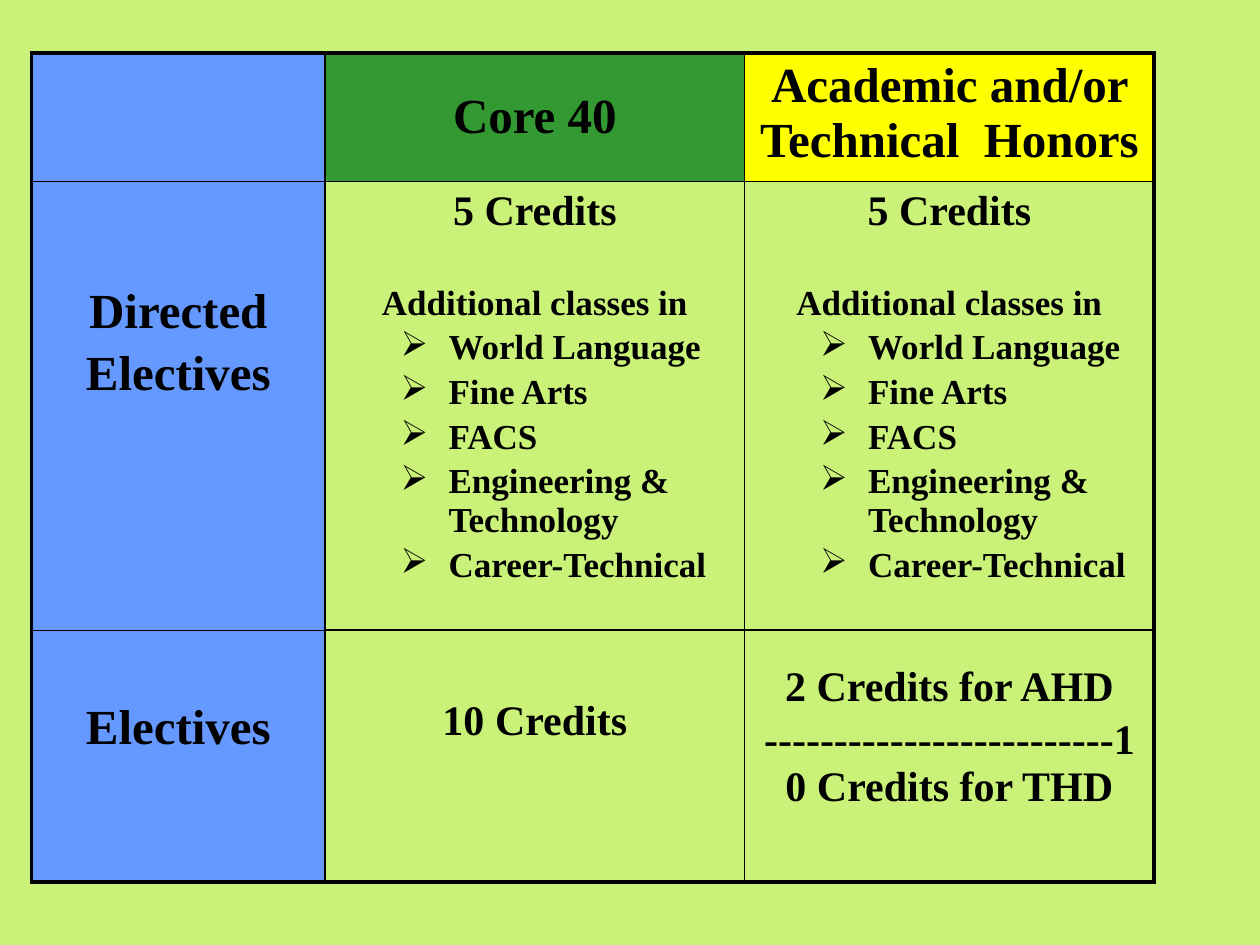
from lxml.etree import SubElement
from pptx import Presentation
from pptx.dml.color import RGBColor
from pptx.enum.text import MSO_ANCHOR, PP_ALIGN
from pptx.oxml.ns import qn
from pptx.util import Inches, Pt

COLORS = {
    "background": "CAF278",
    "label": "6699FF",
    "core": "339933",
    "honors": "FFFF00",
    "ink": "000000",
}
FONT = "Times New Roman"
COLUMN_WIDTHS = [2.33, 3.33, 3.25]
ROW_HEIGHTS = [1.02, 3.56, 2]
SUBJECTS = [
    "World Language",
    "Fine Arts",
    "FACS",
    "Engineering & Technology",
    "Career-Technical",
]


def color(name):
    """Return the named palette colour."""
    return RGBColor.from_string(COLORS[name])


def add_line(cell, position, text, size, gap=None):
    """Write one bold centred line in a cell, spaced in proportion to its size."""
    frame = cell.text_frame
    line = frame.paragraphs[0] if position == 0 else frame.add_paragraph()
    line.alignment = PP_ALIGN.CENTER
    if position:
        line.space_before = Pt(round(size / 6, 1) if gap is None else gap)
    run = line.add_run()
    run.text = text
    run.font.name = FONT
    run.font.size = Pt(size)
    run.font.bold = True
    run.font.color.rgb = color("ink")
    return line


def add_bullet(cell, position, text):
    """Write one indented arrow bullet in a cell."""
    line = add_line(cell, position, text, 20)
    line.alignment = PP_ALIGN.LEFT
    line.level = 1
    properties = line._p.get_or_add_pPr()
    properties.set("marL", str(Inches(0.88)))
    properties.set("indent", str(Inches(-0.38)))
    SubElement(properties, qn("a:buChar"), char="➢")


def fill_lines(cell, lines, size, top=0.05):
    """Write lines of one size, starting at a distance from the cell's top."""
    cell.margin_top = Inches(top)
    for position, text in enumerate(lines):
        add_line(cell, position, text, size)


def fill_directed_credits(cell):
    """Write the credits and the list of subjects for directed electives."""
    add_line(cell, 0, "5 Credits", 24)
    add_line(cell, 1, "Additional classes in", 20, gap=28.5)
    for position, subject in enumerate(SUBJECTS, start=2):
        add_bullet(cell, position, subject)


def draw_borders(cell, row, column):
    """Draw thick outer edges, thin inner ones and hairlines between labels."""
    last_row, last_column = len(ROW_HEIGHTS) - 1, len(COLUMN_WIDTHS) - 1
    rule = 0.5 if column == 0 else 1
    widths = {
        "a:lnL": 2.25 if column == 0 else 1,
        "a:lnR": 2.25 if column == last_column else 1,
        "a:lnT": 2.25 if row == 0 else rule,
        "a:lnB": 2.25 if row == last_row else rule,
    }
    properties = cell._tc.get_or_add_tcPr()
    for edge, width in widths.items():
        border = SubElement(properties, qn(edge), w=str(Pt(width)))
        solid = SubElement(border, qn("a:solidFill"))
        SubElement(solid, qn("a:srgbClr"), val=COLORS["ink"])


def paint(cell, row, column):
    """Fill label and heading cells and leave the others clear."""
    headings = {1: "core", 2: "honors"}
    name = "label" if column == 0 else headings[column] if row == 0 else None
    if name:
        cell.fill.solid()
        cell.fill.fore_color.rgb = color(name)
    else:
        cell.fill.background()


def add_credit_table(slide):
    """Add the empty credit table with its grid, borders and fills."""
    table = slide.shapes.add_table(
        len(ROW_HEIGHTS), len(COLUMN_WIDTHS), Inches(0.25), Inches(0.42),
        Inches(sum(COLUMN_WIDTHS)), Inches(sum(ROW_HEIGHTS)),
    ).table
    table.first_row = False
    table.horz_banding = False
    for column, width in enumerate(COLUMN_WIDTHS):
        table.columns[column].width = Inches(width)
    for row, height in enumerate(ROW_HEIGHTS):
        table.rows[row].height = Inches(height)
        for column in range(len(COLUMN_WIDTHS)):
            cell = table.cell(row, column)
            draw_borders(cell, row, column)
            paint(cell, row, column)
    return table


def main():
    """Build and save the slide."""
    presentation = Presentation()
    presentation.slide_width = Inches(10)
    presentation.slide_height = Inches(7.5)
    slide = presentation.slides.add_slide(presentation.slide_layouts[6])
    slide.background.fill.solid()
    slide.background.fill.fore_color.rgb = color("background")

    credits = add_credit_table(slide)
    fill_lines(credits.cell(0, 1), ["Core 40"], 28)
    credits.cell(0, 1).vertical_anchor = MSO_ANCHOR.MIDDLE
    fill_lines(credits.cell(0, 2), ["Academic and/or Technical  Honors"], 28)
    fill_lines(credits.cell(1, 0), ["Directed", "Electives"], 28, top=0.82)
    for column in (1, 2):
        fill_directed_credits(credits.cell(1, column))
    fill_lines(credits.cell(2, 0), ["Electives"], 28, top=0.56)
    fill_lines(credits.cell(2, 1), ["10 Credits"], 24, top=0.54)
    honors_electives = [
        "2 Credits for AHD",
        "-------------------------10 Credits for THD",
    ]
    fill_lines(credits.cell(2, 2), honors_electives, 24, top=0.27)
    presentation.save("out.pptx")


if __name__ == "__main__":
    main()
